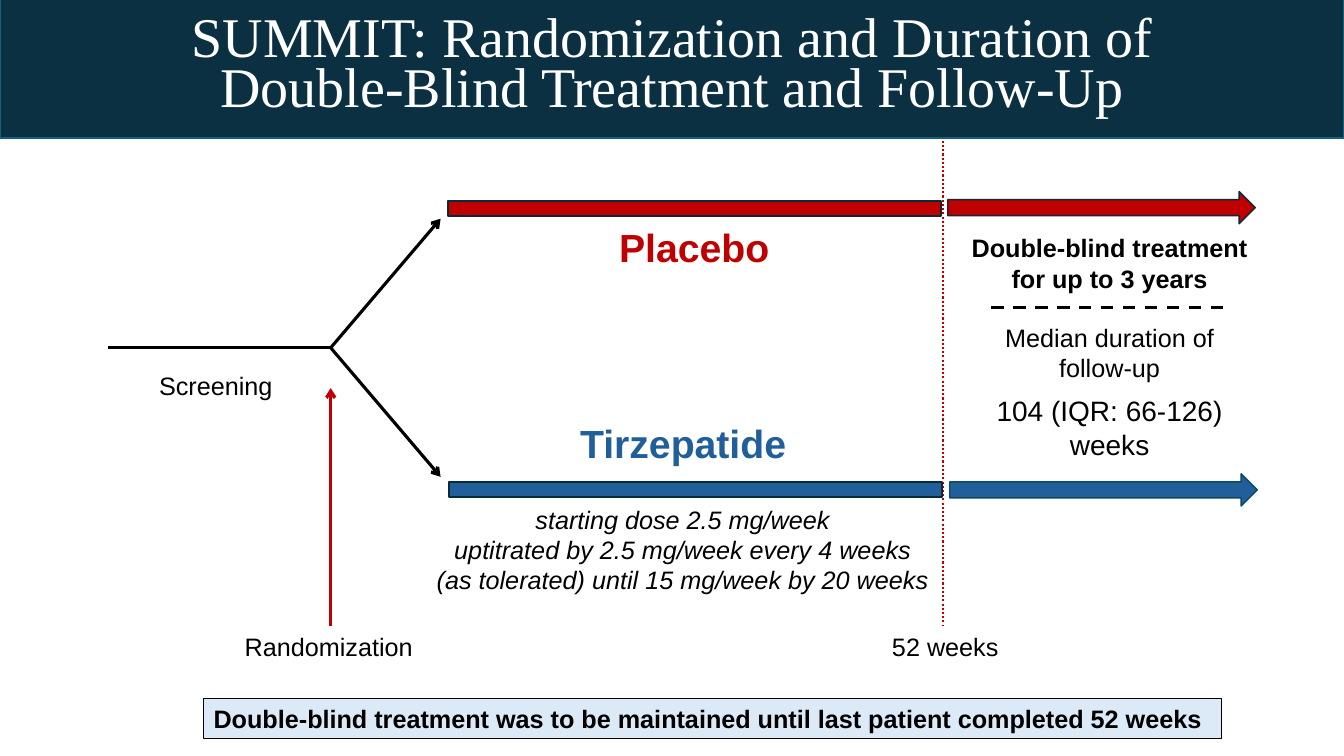
from lxml.etree import SubElement
from pptx import Presentation
from pptx.dml.color import RGBColor
from pptx.enum.dml import MSO_LINE_DASH_STYLE as DASH
from pptx.enum.shapes import MSO_CONNECTOR as CONN, MSO_SHAPE as SHAPE
from pptx.enum.text import MSO_ANCHOR as ANCHOR, PP_ALIGN as ALIGN
from pptx.oxml.ns import qn
from pptx.util import Inches, Pt

RED, BLUE, BLACK, WHITE = "C00000", "215F9A", "000000", "FFFFFF"
NAVY, EDGE = "0B3041", "092A39"


def rgb(code):
    return RGBColor.from_string(code)


class TrialSlide:
    """Draws trial diagram elements on a grid of tenth-of-an-inch cells."""

    cell = Inches(0.1)
    font = "Arial"
    size = 18

    def __init__(self, prs):
        self.s = prs.slides.add_slide(prs.slide_layouts[6])

    def grid(self, *cells):
        return [round(c * self.cell) for c in cells]

    def line(self, x1, y1, x2, y2, color=BLACK, width=2.25, dash=None, arrow=False):
        c = self.s.shapes.add_connector(CONN.STRAIGHT, *self.grid(x1, y1, x2, y2))
        c.line.color.rgb = rgb(color)
        c.line.width = Pt(width)
        if dash:
            c.line.dash_style = dash
        props = c._element.spPr
        if arrow:
            SubElement(props.find(qn("a:ln")), qn("a:tailEnd"), type="arrow")
        SubElement(props, qn("a:effectLst"))

    def shape(self, kind, x, y, w, h, fill, edge, width):
        sp = self.s.shapes.add_shape(kind, *self.grid(x, y, w, h))
        sp.shadow.inherit = False
        sp.fill.solid()
        sp.fill.fore_color.rgb = rgb(fill)
        sp.line.color.rgb = rgb(edge)
        sp.line.width = Pt(width)
        return sp

    def text(self, x, y, w, h, *lines, wrap=False, **style):
        sp = self.s.shapes.add_textbox(*self.grid(x, y, w, h))
        sp.text_frame.word_wrap = wrap
        for line in lines:
            self.para(sp, line, **style)
        return sp

    def para(self, sp, text, size=None, color=BLACK, bold=False, italic=False,
             font=None, align=ALIGN.CENTER, before=0, spacing=None):
        tf = sp.text_frame
        p = tf.add_paragraph() if tf.text else tf.paragraphs[0]
        p.text = text
        p.alignment = align
        p.space_before = Pt(before)
        if spacing:
            p.line_spacing = Pt(spacing)
        p.font.name = font or self.font
        p.font.size = Pt(size or self.size)
        p.font.bold, p.font.italic = bold, italic
        p.font.color.rgb = rgb(color)


def main():
    prs = Presentation()
    prs.slide_width, prs.slide_height = Inches(13.33), Inches(7.5)
    t = TrialSlide(prs)

    fork_x, fork_y, rise = 32.8, 34.5, 12.8
    t.line(10.7, fork_y, fork_x, fork_y)
    for tip_y in (fork_y - rise, fork_y + rise):
        t.line(fork_x, fork_y, 43.7, tip_y, arrow=True)
    t.line(93.5, 12.3, 93.5, 62, RED, 1.5, DASH.ROUND_DOT)
    t.line(fork_x, 62.1, fork_x, 38.5, RED, arrow=True)

    header = t.shape(SHAPE.RECTANGLE, 0, -0.1, 133.3, 13.8, NAVY, "156082", 1)
    header.text_frame.vertical_anchor = ANCHOR.MIDDLE
    for title in ("SUMMIT: Randomization and Duration of",
                  "Double-Blind Treatment and Follow-Up"):
        t.para(header, title, 40, WHITE, font="Times New Roman", spacing=36)

    arms = [(44.4, 19.9, 94, 19, RED, EDGE), (44.5, 47.8, 94.2, 47, BLUE, "104862")]
    for bar_x, bar_y, arrow_x, arrow_y, color, edge in arms:
        t.shape(SHAPE.RECTANGLE, bar_x, bar_y, 48.9, 1.5, color, EDGE, 1.5)
        t.shape(SHAPE.RIGHT_ARROW, arrow_x, arrow_y, 30.5, 3.2, color, edge, 1)

    t.text(14.7, 36.2, 13.4, 4, "Screening")
    t.text(23.2, 62.1, 18.8, 4, "Randomization")
    t.text(87.4, 62.1, 12.7, 4, "52 weeks")
    t.text(60.3, 21.7, 17.1, 5.7, "Placebo", size=28, color=RED, bold=True)
    t.text(56.4, 41.1, 22.7, 5.7, "Tirzepatide", size=28, color=BLUE, bold=True)
    t.text(42.1, 49.5, 51.2, 10.1, "starting dose 2.5 mg/week",
           "uptitrated by 2.5 mg/week every 4 weeks",
           "(as tolerated) until 15 mg/week by 20 weeks", italic=True)

    duration = t.text(94.6, 22.6, 30.9, 24.2, "Double-blind treatment for up to 3 years",
                      wrap=True, bold=True)
    t.para(duration, "Median duration of", before=20.7)
    t.para(duration, "follow-up")
    t.para(duration, "104 (IQR: 66-126) weeks", 20, before=8)
    t.line(98.3, 30.5, 121.3, 30.5, dash=DASH.DASH)

    note = t.shape(SHAPE.RECTANGLE, 20.2, 69.3, 101, 4, "DCEAF7", BLACK, 0.75)
    note.text_frame.word_wrap = True
    t.para(note, "Double-blind treatment was to be maintained until last patient "
           "completed 52 weeks", bold=True, align=ALIGN.LEFT)
    prs.save("out.pptx")


if __name__ == "__main__":
    main()
